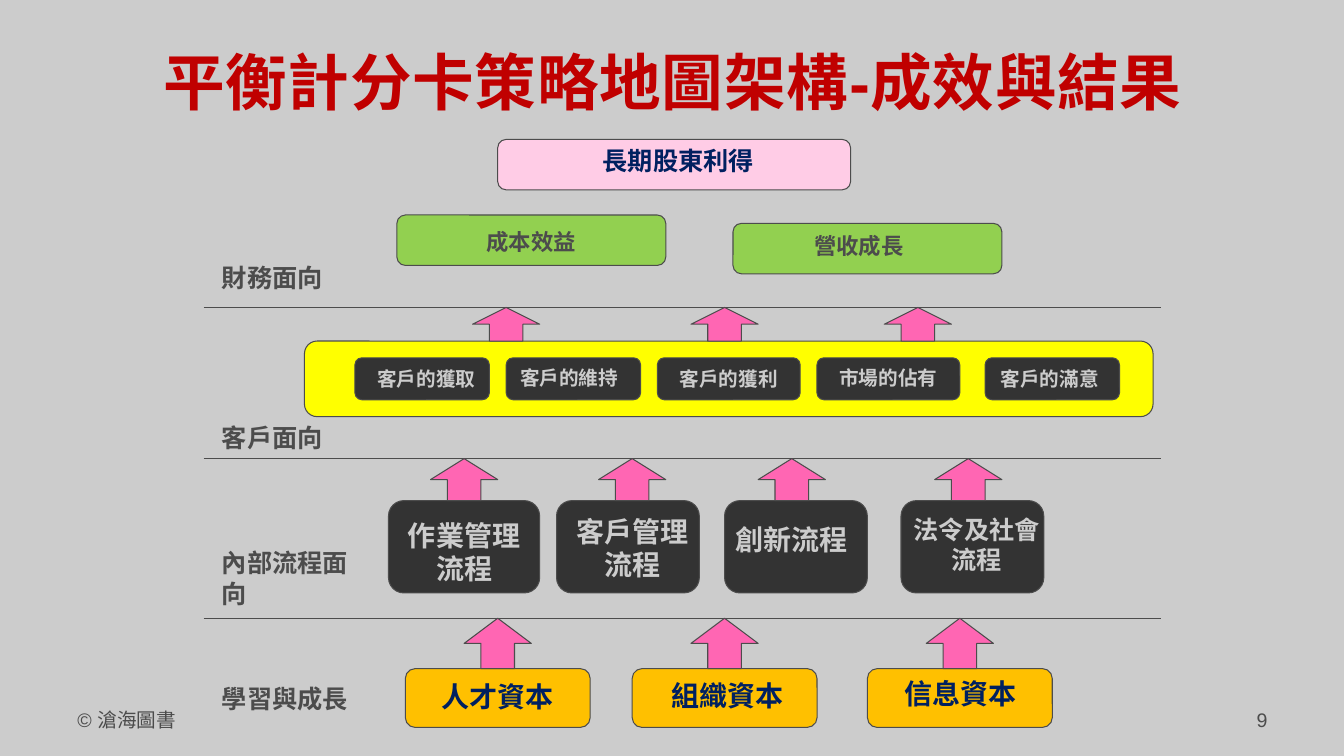
from lxml import etree
from pptx import Presentation, util as u
from pptx.dml.color import RGBColor
from pptx.enum import shapes, text
from pptx.oxml.ns import qn

COLORS = {
    "background": "CCCCCC", "title": "C00000", "gray": "4C4C4C", "navy": "002060",
    "pink": "FFCCE6", "green": "92D050", "yellow": "FFFF00", "dark": "333333",
    "orange": "FFC000", "arrow": "FF66B3", "light": "CCCCCC",
}
COLORS = {name: RGBColor.from_string(value) for name, value in COLORS.items()}

# The map is drawn on a grid of 1/12 inch, starting where the first divider begins.
CELL, LEFT, TOP = 1 / 12, 2.02, 3.05


def add_block(kind, column, row, columns, rows, fill):
    """Draw an outlined preset shape on the grid."""
    shape = slide.shapes.add_shape(
        kind, u.Inches(LEFT + column * CELL), u.Inches(TOP + row * CELL),
        u.Inches(columns * CELL), u.Inches(rows * CELL))
    shape.shadow.inherit = False
    shape.fill.solid()
    shape.fill.fore_color.rgb = COLORS[fill]
    shape.line.color.rgb = COLORS["gray"]
    shape.line.width = u.Pt(0.75)


def add_text(words, left, top, width, size, color, align, bold=True):
    """Place a text box, in inches, one line high and growing with its text."""
    box = slide.shapes.add_textbox(
        u.Inches(left), u.Inches(top), u.Inches(width), u.Inches(size / 60 + 0.1))
    frame = box.text_frame
    frame.word_wrap = True
    frame.auto_size = text.MSO_AUTO_SIZE.SHAPE_TO_FIT_TEXT
    frame.text = words
    paragraph = frame.paragraphs[0]
    paragraph.alignment = align
    font = paragraph.runs[0].font
    font.name, font.size, font.bold = "Arial", u.Pt(size), bold
    font.color.rgb = COLORS[color]


presentation = Presentation()
presentation.slide_width, presentation.slide_height = u.Inches(13.33), u.Inches(7.5)
slide = presentation.slides.add_slide(presentation.slide_layouts[5])
slide.background.fill.solid()
slide.background.fill.fore_color.rgb = COLORS["background"]

# Title and footer
title = slide.shapes.title
title.left, title.top = u.Inches(0.67), u.Inches(0.25)
title.width, title.height = u.Inches(12), u.Inches(1.1)
title.text_frame.text = "平衡計分卡策略地圖架構-成效與結果"
title.text_frame.auto_size = text.MSO_AUTO_SIZE.NONE
title.text_frame.vertical_anchor = text.MSO_ANCHOR.MIDDLE
title.text_frame.paragraphs[0].alignment = text.PP_ALIGN.CENTER
title_font = title.text_frame.paragraphs[0].runs[0].font
title_font.name, title_font.size, title_font.bold = "Arial", u.Pt(44), True
title_font.color.rgb = COLORS["title"]
title.text_frame.paragraphs[0].runs[0]._r.get_or_add_rPr().set("spc", "50")

add_text("© 滄海圖書", 0.67, 6.97, 3.11, 14, "gray", text.PP_ALIGN.LEFT, bold=False)
add_text("9", 9.56, 6.97, 3.11, 14, "gray", text.PP_ALIGN.RIGHT, bold=False)

# Dividers between the perspectives
DIVIDER_ROWS = (0, 18, 37)
for row in DIVIDER_ROWS:
    y = u.Inches(TOP + row * CELL)
    divider = slide.shapes.add_connector(
        shapes.MSO_CONNECTOR.STRAIGHT, u.Inches(LEFT), y, u.Inches(LEFT + 114 * CELL), y)
    divider.line.color.rgb = COLORS["gray"]
    divider.line.width = u.Pt(0.75)
    etree.SubElement(divider._element.spPr, qn("a:effectLst"))

# Perspective names: row, words
for row, words in ((-6, "財務面向"), (13.1, "客戶面向"), (28, "內部流程面向"), (44.2, "學習與成長")):
    add_text(words, LEFT + CELL, TOP + row * CELL, 20 * CELL, 18, "gray", text.PP_ALIGN.LEFT)

# Bands of boxes: row, height, fill, text colour, then the boxes as
# (column, width, words, text column, text row, text width, text size)
BANDS = (
    (-20, 6, "pink", "navy", ((35, 42, "長期股東利得", 35, -19.9, 43, 18),)),
    (-11, 6, "green", "gray", ((23, 32, "成本效益", 26, -10, 26, 16),)),
    (-10, 6, "green", "gray", ((63, 32, "營收成長", 62, -9.5, 32, 16),)),
    (6, 5, "dark", "light", (
        (18, 16, "客戶的獲取", 19, 6.5, 15, 14),
        (36, 16, "客戶的維持", 36, 6.4, 15, 14),
        (54, 17, "客戶的獲利", 55, 6.5, 15, 14),
        (73, 17, "市場的佔有", 72, 6.4, 19, 14),
        (93, 16, "客戶的滿意", 91.2, 6.5, 19, 14))),
    (23, 11, "dark", "light", (
        (22, 18, "作業管理流程", 22, 24.5, 18, 20),
        (42, 17, "客戶管理流程", 42, 24, 18, 20),
        (62, 17, "創新流程", 61, 25, 18, 20),
        (83, 17, "法令及社會流程", 83, 24, 18, 18))),
    (43, 7, "orange", "navy", (
        (24, 22, "人才資本", 24.5, 43.7, 21, 20),
        (51, 22, "組織資本", 51.8, 43.6, 21, 20),
        (79, 22, "信息資本", 79.6, 43.3, 21, 20))),
)
ROUNDED = shapes.MSO_SHAPE.ROUNDED_RECTANGLE
add_block(ROUNDED, 12, 4, 101, 9, "yellow")
for row, height, fill, color, boxes in BANDS:
    for column, width, words, text_column, text_row, text_width, size in boxes:
        add_block(ROUNDED, column, row, width, height, fill)
        add_text(words, LEFT + text_column * CELL, TOP + text_row * CELL,
                 text_width * CELL, size, color, text.PP_ALIGN.CENTER)

# Arrows rising to each divider: height, columns
ARROWS = ((4, (32, 58, 81)), (5, (27, 47, 66, 87)), (6, (31, 58, 86)))
for row, (height, columns) in zip(DIVIDER_ROWS, ARROWS):
    for column in columns:
        add_block(shapes.MSO_SHAPE.UP_ARROW, column, row, 8, height, "arrow")

presentation.save("out.pptx")
